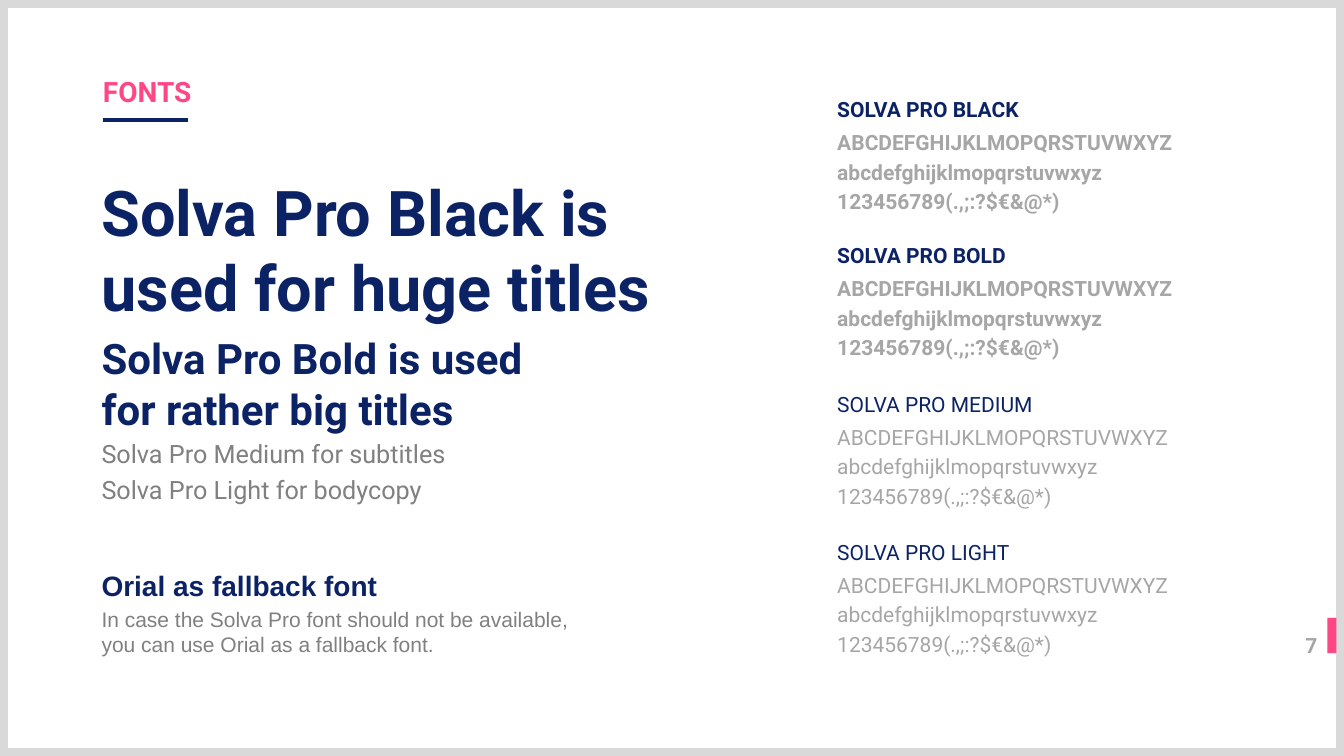
from lxml.etree import SubElement
from pptx import Presentation
from pptx.dml.color import RGBColor
from pptx.enum.shapes import MSO_CONNECTOR as CONNECTOR, MSO_SHAPE as SHAPE
from pptx.enum.text import MSO_ANCHOR as ANCHOR, MSO_AUTO_SIZE as AUTO_SIZE, PP_ALIGN as ALIGN
from pptx.oxml.ns import qn
from pptx.util import Cm, Pt

WIDTH, HEIGHT = 33.87, 19.05
NAVY, PINK, GREY, LIGHT_GREY, FRAME_GREY = "0B2265", "FF4785", "808080", "A6A6A6", "D9D9D9"

# Paragraphs: text, font, size, bold, colour
KICKER = [("FONTS", "Roboto", 20, True, PINK)]
PAGE_NUMBER = [("7", "Roboto", 15, True, LIGHT_GREY)]
USAGE = [
    ("Solva Pro Black is used for huge titles", "Roboto", 45, True, NAVY),
    ("Solva Pro Bold is used\vfor rather big titles", "Roboto", 30, True, NAVY),
    ("Solva Pro Medium for subtitles", "Roboto", 18, False, GREY),
    ("Solva Pro Light for bodycopy", "Roboto", 18, False, GREY),
]
FALLBACK = [
    ("Orial as fallback font", "Arial", 20, True, NAVY),
    ("In case the Solva Pro font should not be available, "
     "you can use Orial as a fallback font.", "Arial", 15, False, GREY),
]
# Specimens: label, bold, top
SPECIMENS = [
    ("SOLVA PRO BLACK", True, 2.31),
    ("SOLVA PRO BOLD", True, 5.99),
    ("SOLVA PRO MEDIUM", False, 9.73),
    ("SOLVA PRO LIGHT", False, 13.46),
]
GLYPHS = ["ABCDEFGHIJKLMOPQRSTUVWXYZ", "abcdefghijklmopqrstuvwxyz", "123456789(.,;:?$€&@*)"]
SPECIMEN_LEFT, SPECIMEN_WIDTH, GLYPHS_OFFSET = 20.85, 10.36, 0.84


def rgb(colour):
    return RGBColor.from_string(colour)


def write(frame, paragraphs, align=ALIGN.LEFT, anchor=ANCHOR.TOP):
    settings = {"word_wrap": True, "auto_size": AUTO_SIZE.NONE, "vertical_anchor": anchor}
    for name, value in settings.items():
        setattr(frame, name, value)
    for index, (text, font, size, bold, colour) in enumerate(paragraphs):
        paragraph = frame.add_paragraph() if index else frame.paragraphs[0]
        paragraph.text = text
        paragraph.alignment = align
        paragraph.space_before = Pt(size * 0.2 if index else 0)
        for run in paragraph.runs:
            for name, value in {"name": font, "size": Pt(size), "bold": bold}.items():
                setattr(run.font, name, value)
            run.font.color.rgb = rgb(colour)


def add_text(slide, box, paragraphs, align=ALIGN.LEFT):
    frame = slide.shapes.add_textbox(*map(Cm, box)).text_frame
    write(frame, paragraphs, align)
    return frame


def add_box(slide, box):
    shape = slide.shapes.add_shape(SHAPE.RECTANGLE, *map(Cm, box))
    shape.shadow.inherit = False
    return shape


def main():
    deck = Presentation()
    deck.slide_width, deck.slide_height = Cm(WIDTH), Cm(HEIGHT)
    slide = deck.slides.add_slide(deck.slide_layouts[5])

    kicker = slide.shapes.title
    kicker.left, kicker.top, kicker.width, kicker.height = map(Cm, (2.34, 1.37, 14.6, 1.47))
    write(kicker.text_frame, KICKER, anchor=ANCHOR.BOTTOM)

    border = add_box(slide, (0, 0, WIDTH, HEIGHT))
    border.fill.background()
    border.line.color.rgb = rgb(FRAME_GREY)
    border.line.width = Pt(11)

    underline = slide.shapes.add_connector(
        CONNECTOR.STRAIGHT, *map(Cm, (2.59, 3.02, 4.75, 3.02)))
    underline.line.color.rgb = rgb(NAVY)
    underline.line.width = Pt(3)
    SubElement(underline.element.spPr, qn("a:effectLst"))

    page_marker = add_box(slide, (33.45, 15.57, 0.23, 0.89))
    page_marker.fill.solid()
    page_marker.fill.fore_color.rgb = rgb(PINK)
    page_marker.line.fill.background()

    page_number = add_text(slide, (31.24, 15.82, 2.21, 1.09), PAGE_NUMBER, ALIGN.RIGHT)
    page_number.paragraphs[0].runs[0].font._element.set("spc", "80")

    for label, bold, top in SPECIMENS:
        add_text(slide, (SPECIMEN_LEFT, top + GLYPHS_OFFSET, SPECIMEN_WIDTH, 2.92),
                 [(line, "Roboto", 15, bold, LIGHT_GREY) for line in GLYPHS])
        add_text(slide, (SPECIMEN_LEFT, top, SPECIMEN_WIDTH, 1.04),
                 [(label, "Roboto", 15, bold, NAVY)])

    add_text(slide, (2.31, 4.24, 16, 8.89), USAGE)
    add_text(slide, (2.31, 14.2, 12.32, 2.54), FALLBACK)
    deck.save("out.pptx")


if __name__ == "__main__":
    main()
